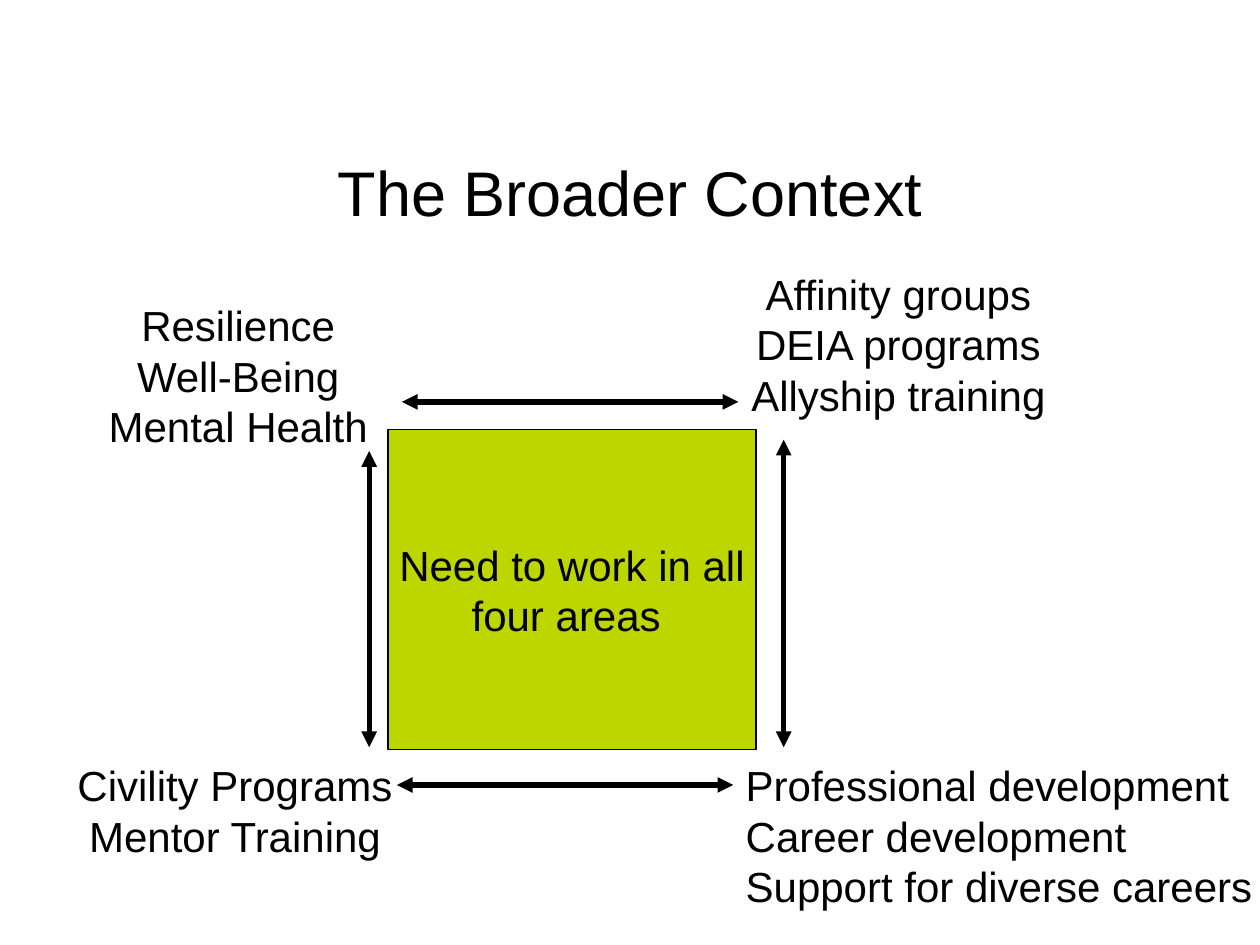
from lxml import etree
from pptx import Presentation
from pptx.dml.color import RGBColor
from pptx.enum.shapes import MSO_CONNECTOR, MSO_SHAPE
from pptx.enum.text import MSO_ANCHOR, PP_ALIGN
from pptx.oxml.ns import qn
from pptx.util import Inches, Pt

LEFT, CENTER = PP_ALIGN.LEFT, PP_ALIGN.CENTER
TOP, MIDDLE = MSO_ANCHOR.TOP, MSO_ANCHOR.MIDDLE
STRAIGHT, RECTANGLE = MSO_CONNECTOR.STRAIGHT, MSO_SHAPE.RECTANGLE
COLORS = {"ink": "000000", "square": "BED600"}
INK = RGBColor.from_string(COLORS["ink"])

prs = Presentation()
prs.slide_width, prs.slide_height = Inches(10), Inches(7.5)
s = prs.slides.add_slide(prs.slide_layouts[6])
COLUMN, ROW = prs.slide_width / 100, prs.slide_height / 75


def grid(*cells):
    return [round(n * (ROW if i % 2 else COLUMN)) for i, n in enumerate(cells)]


def write(sp, text, size=24, align=CENTER, anchor=TOP, wrap=False):
    tf = sp.text_frame
    tf.word_wrap = wrap
    tf.vertical_anchor = anchor
    for i, line in enumerate(text.split("\n")):
        p = tf.paragraphs[0] if i == 0 else tf.add_paragraph()
        p.alignment = align
        p.line_spacing = Pt(size * 1.2)
        r = p.add_run()
        r.text = line
        r.font.name = "Arial"
        r.font.size = Pt(size)
        r.font.color.rgb = INK


title = s.shapes.add_textbox(*grid(5, 11.7, 90, 10.8))
write(title, "The Broader Context", size=36, wrap=True)

square = s.shapes.add_shape(RECTANGLE, *grid(30.8, 34.1, 29.2, 25.4))
square.shadow.inherit = False
square.fill.solid()
square.fill.fore_color.rgb = RGBColor.from_string(COLORS["square"])
square.line.color.rgb = INK
square.line.width = Pt(0.75)
write(square, "Need to work in all\nfour areas ", anchor=MIDDLE)

areas = [
    ((7.5, 23.3, 22.8, 13.1), "Resilience\nWell-Being\nMental Health", CENTER),
    ((56.7, 20.8, 29.2, 17.2), "Affinity groups\nDEIA programs\nAllyship training", CENTER),
    ((5, 59.8, 27.3, 13.1), "Civility Programs\nMentor Training", CENTER),
    ((58.2, 59.8, 42.6, 13.1),
     "Professional development\nCareer development\nSupport for diverse careers", LEFT),
]
for box, text, align in areas:
    write(s.shapes.add_textbox(*grid(*box)), text, align=align)

arrows = [
    (31.9, 31.9, 58.6, 31.9),
    (29.3, 59.3, 29.3, 35.8),
    (31.5, 62.3, 58.2, 62.3),
    (62.2, 59.3, 62.2, 34.9),
]
for ends in arrows:
    arrow = s.shapes.add_connector(STRAIGHT, *grid(*ends))
    arrow.line.color.rgb = INK
    arrow.line.width = Pt(3)
    ln = arrow.line._get_or_add_ln()
    for end in ("a:headEnd", "a:tailEnd"):
        etree.SubElement(ln, qn(end), type="triangle")
    etree.SubElement(arrow._element.spPr, qn("a:effectLst"))

prs.save("out.pptx")
